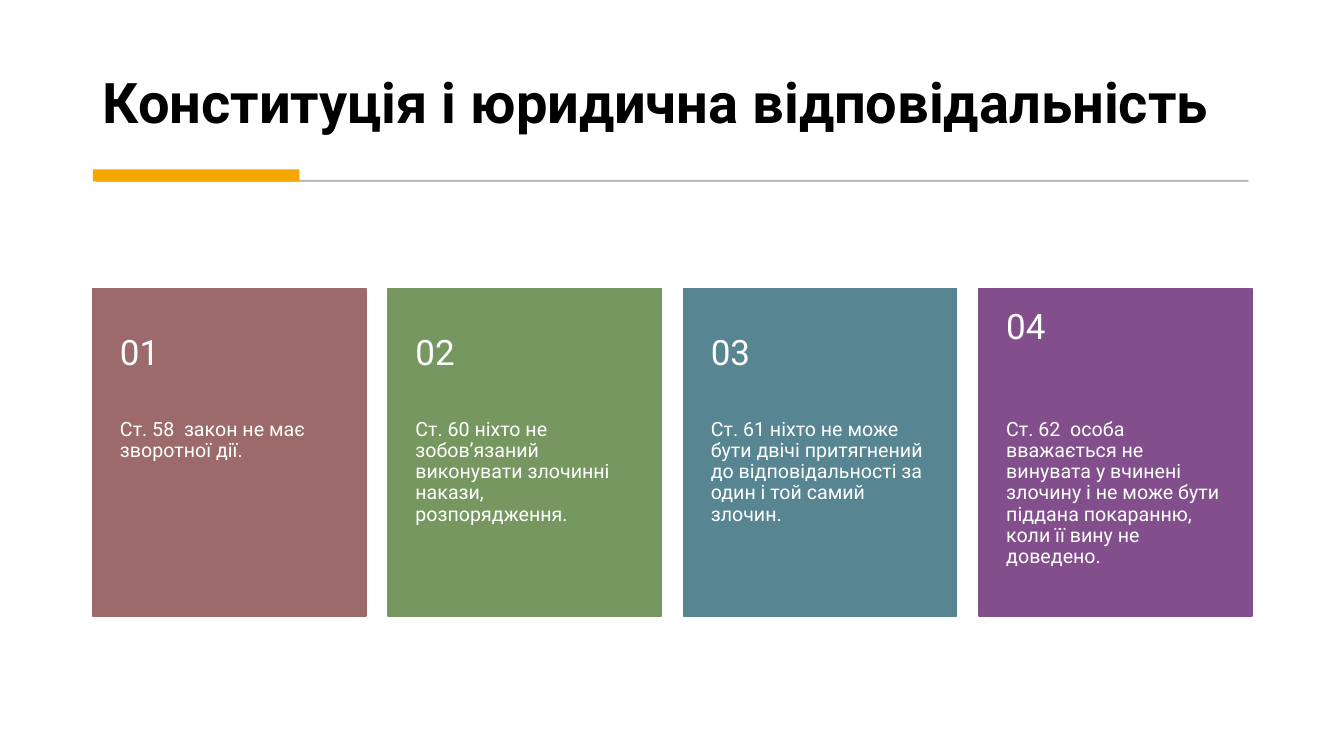
from dataclasses import dataclass
from typing import Optional

from lxml.etree import SubElement
from pptx import Presentation
from pptx.dml.color import RGBColor
from pptx.dml.fill import FillFormat
from pptx.enum.shapes import MSO_SHAPE as Preset
from pptx.enum.text import MSO_ANCHOR as Anchor
from pptx.oxml.ns import qn
from pptx.shapes.shapetree import GroupShapes, SlideShapes
from pptx.util import Emu, Pt

PX = 9144


@dataclass(frozen=True)
class Theme:
    font: str = "Roboto"
    ink: str = "000000"
    light: str = "FFFFFF"
    rule: str = "595959"
    accent: str = "F5A700"
    title_size: int = 40
    number_size: int = 25
    body_size: int = 14
    line_spacing: float = 0.9
    rule_opacity: int = 30


@dataclass(frozen=True)
class Frame:
    left: int
    top: int
    width: int
    height: int

    def emu(self) -> tuple[Emu, ...]:
        sides = (self.left, self.top, self.width, self.height)
        return tuple(Emu(side * PX) for side in sides)


@dataclass(frozen=True)
class Insets:
    left: int
    top: int
    right: int
    bottom: int


@dataclass(frozen=True)
class TextStyle:
    size: int
    color: str
    insets: Insets
    anchor: Anchor
    bold: bool = False


@dataclass(frozen=True)
class Card:
    number: str
    text: str
    color: str
    number_bottom: int = 18


THEME = Theme()
Shapes = SlideShapes | GroupShapes

CARDS = [
    Card("01", "Ст. 58  закон не має зворотної дії.", "9C6A6A"),
    Card("02", "Ст. 60 ніхто не зобов’язаний  виконувати злочинні накази, "
               "розпорядження.", "769860"),
    Card("03", "Ст. 61 ніхто не може бути двічі притягнений до "
               "відповідальності за один і той самий злочин.", "578592"),
    Card("04", "Ст. 62  особа вважається не винувата у вчинені злочину і не "
               "може бути піддана покаранню, коли її вину не доведено.",
         "824F8C", number_bottom=68),
]
CARD_LEFT, CARD_TOP, CARD_STEP = 92, 286, 293
CARD_WIDTH, CARD_HEIGHT, NUMBER_HEIGHT = 271, 325, 130
CARD_INSET = 27


def paint(fill: FillFormat, color: str, opacity: Optional[int] = None) -> None:
    fill.solid()
    fill.fore_color.rgb = RGBColor.from_string(color)
    if opacity is not None:
        for tint in fill._xPr.iter(qn("a:srgbClr")):
            SubElement(tint, qn("a:alpha"), val=str(opacity * 1000))


def add_block(shapes: Shapes, frame: Frame, color: str,
              line_width: float = 0, opacity: Optional[int] = None) -> None:
    block = shapes.add_shape(Preset.RECTANGLE, *frame.emu())
    block.shadow.inherit = False
    paint(block.fill, color, opacity)
    if line_width:
        block.line.width = Pt(line_width)
        paint(block.line.fill, color)
        if opacity is not None:
            tint = block.line._ln.find(".//" + qn("a:srgbClr"))
            SubElement(tint, qn("a:alpha"), val=str(opacity * 1000))
    else:
        block.line.fill.background()


def add_text(shapes: Shapes, frame: Frame, text: str, style: TextStyle) -> None:
    box = shapes.add_textbox(*frame.emu())
    body = box.text_frame
    body.word_wrap = True
    body.vertical_anchor = style.anchor
    body.margin_left = Emu(style.insets.left * PX)
    body.margin_top = Emu(style.insets.top * PX)
    body.margin_right = Emu(style.insets.right * PX)
    body.margin_bottom = Emu(style.insets.bottom * PX)
    para = body.paragraphs[0]
    para.line_spacing = THEME.line_spacing
    span = para.add_run()
    span.text = text
    span.font.name = THEME.font
    span.font.size = Pt(style.size)
    span.font.bold = style.bold
    span.font.color.rgb = RGBColor.from_string(style.color)


def add_card(shapes: Shapes, card: Card, left: int) -> None:
    add_block(shapes, Frame(left, CARD_TOP, CARD_WIDTH, CARD_HEIGHT),
              card.color, line_width=1)
    add_text(shapes,
             Frame(left, CARD_TOP + NUMBER_HEIGHT, CARD_WIDTH,
                   CARD_HEIGHT - NUMBER_HEIGHT),
             card.text,
             TextStyle(THEME.body_size, THEME.light,
                       Insets(CARD_INSET, 0, CARD_INSET, 36), Anchor.TOP))
    add_text(shapes, Frame(left, CARD_TOP, CARD_WIDTH, NUMBER_HEIGHT),
             card.number,
             TextStyle(THEME.number_size, THEME.light,
                       Insets(CARD_INSET, 18, CARD_INSET, card.number_bottom),
                       Anchor.MIDDLE))


def main() -> None:
    deck = Presentation()
    deck.slide_width, deck.slide_height = Emu(1333 * PX), Emu(750 * PX)
    page = deck.slides.add_slide(deck.slide_layouts[6])
    paint(page.background.fill, THEME.light)

    add_text(page.shapes, Frame(92, 28, 1149, 111),
             "Конституція і юридична відповідальність",
             TextStyle(THEME.title_size, THEME.ink, Insets(10, 5, 10, 5),
                       Anchor.BOTTOM, bold=True))
    add_block(page.shapes, Frame(95, 179, 1143, 1), THEME.rule,
              line_width=0.75, opacity=THEME.rule_opacity)
    add_block(page.shapes, Frame(92, 168, 205, 12), THEME.accent)

    cards = page.shapes.add_group_shape()
    for index, card in enumerate(CARDS):
        add_card(cards.shapes, card, CARD_LEFT + index * CARD_STEP)

    deck.save("out.pptx")


if __name__ == "__main__":
    main()
